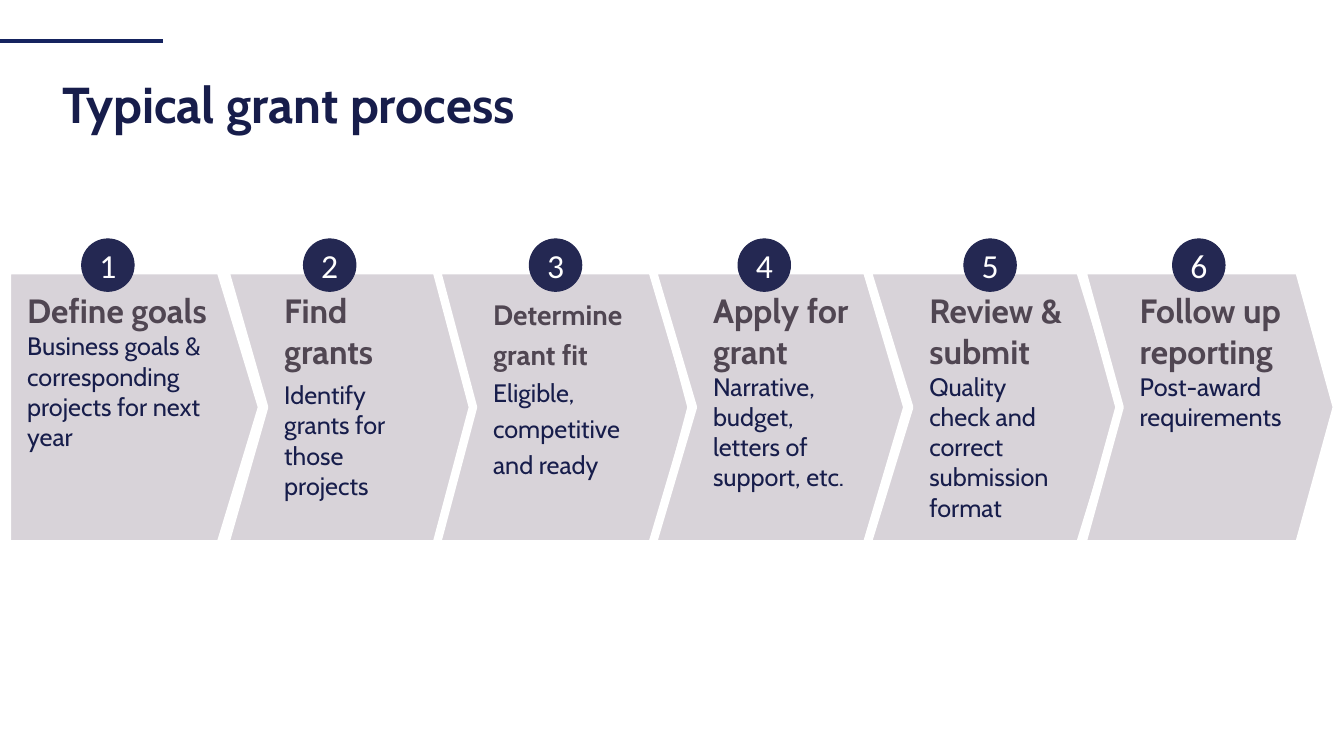
from dataclasses import dataclass

from lxml import etree
from pptx import Presentation
from pptx import util as u
from pptx.dml.color import RGBColor
from pptx.enum import shapes, text
from pptx.oxml.ns import qn

NAVY, RULE_BLUE, BADGE, PLUM, GREY, WHITE = (
    "171D4B", "15235F", "242852", "504652", "D8D3D9", "FFFFFF")
ARROW_TOP, ARROW_WIDTH, ARROW_HEIGHT = 2.68, 2.53, 2.72
BADGE_TOP, BADGE_SIZE = 2.37, 0.52


@dataclass(frozen=True)
class Step:
    left: float
    badge_left: float
    point: float
    heading: str
    detail: str
    heading_size: int = 24
    line_spacing: float = 1.0
    gap: int = 0


STEPS = [
    Step(0.07, 0.81, 0.163, "Define goals",
         "Business goals & corresponding projects for next year"),
    Step(2.23, 3.01, 0.154, "Find grants", "Identify grants for those projects", gap=6),
    Step(4.33, 5.25, 0.143, "Determine grant fit", "Eligible, competitive and ready",
         heading_size=20, line_spacing=1.2),
    Step(6.47, 7.32, 0.159, "Apply for grant", "Narrative, budget, letters of support, etc."),
    Step(8.6, 9.56, 0.165, "Review & submit", "Quality check and correct submission format"),
    Step(10.73, 11.63, 0.148, "Follow up reporting", "Post-award requirements"),
]


def color(value: str) -> RGBColor:
    return RGBColor.from_string(value)


def set_format(target, values: dict) -> None:
    for name, value in values.items():
        setattr(target, name, value)


def set_frame(frame, left: float, top: float, right: float, bottom: float, anchor) -> None:
    set_format(frame, {
        "word_wrap": True, "vertical_anchor": anchor,
        "margin_left": u.Inches(left), "margin_top": u.Inches(top),
        "margin_right": u.Inches(right), "margin_bottom": u.Inches(bottom)})


def write(paragraph, wording: str, size: int, hue: str, bold: bool = False,
          font: str = "Cabin", align=text.PP_ALIGN.LEFT,
          spacing: float = 1.0, before: int = 0) -> None:
    set_format(paragraph, {"alignment": align, "line_spacing": spacing,
                           "space_before": u.Pt(before), "space_after": u.Pt(0)})
    run = paragraph.add_run()
    run.text = wording
    set_format(run.font, {"name": font, "size": u.Pt(size), "bold": bold})
    run.font.color.rgb = color(hue)


def add_filled(slide, kind, left: float, top: float, width: float, height: float,
               fill: str, line: str, line_width: float):
    shape = slide.shapes.add_shape(
        kind, u.Inches(left), u.Inches(top), u.Inches(width), u.Inches(height))
    shape.shadow.inherit = False
    shape.fill.solid()
    shape.fill.fore_color.rgb = color(fill)
    shape.line.color.rgb = color(line)
    shape.line.width = u.Pt(line_width)
    return shape


def add_header(slide) -> None:
    rule = slide.shapes.add_connector(
        shapes.MSO_CONNECTOR.STRAIGHT, u.Inches(0), u.Inches(0.41),
        u.Inches(1.62), u.Inches(0.41))
    rule.line.color.rgb = color(RULE_BLUE)
    rule.line.width = u.Pt(3)
    etree.SubElement(rule._element.spPr, qn("a:effectLst"))
    title = slide.shapes.add_textbox(
        u.Inches(0.52), u.Inches(0.73), u.Inches(12.23), u.Inches(0.66))
    set_frame(title.text_frame, 0.1, 0.05, 0.1, 0.05, text.MSO_ANCHOR.MIDDLE)
    write(title.text_frame.paragraphs[0], "Typical grant process", 36, NAVY,
          bold=True, spacing=0.9)


def add_arrow(slide, step: Step, kind) -> None:
    arrow = add_filled(slide, kind, step.left, ARROW_TOP, ARROW_WIDTH, ARROW_HEIGHT,
                       GREY, WHITE, 6)
    arrow.adjustments[0] = step.point
    frame = arrow.text_frame
    set_frame(frame, 0.2, 0.2, 0.1, 0.1, text.MSO_ANCHOR.TOP)
    write(frame.paragraphs[0], step.heading, step.heading_size, PLUM, bold=True,
          spacing=step.line_spacing)
    write(frame.add_paragraph(), step.detail, 18, NAVY,
          spacing=step.line_spacing, before=step.gap)


def add_badge(slide, step: Step, number: int) -> None:
    badge = add_filled(slide, shapes.MSO_SHAPE.OVAL, step.badge_left, BADGE_TOP,
                       BADGE_SIZE, BADGE_SIZE, BADGE, BADGE, 0.75)
    set_frame(badge.text_frame, 0, 0, 0, 0, text.MSO_ANCHOR.MIDDLE)
    write(badge.text_frame.paragraphs[0], str(number), 24, WHITE,
          font="Calibri", align=text.PP_ALIGN.CENTER)


def main() -> None:
    presentation = Presentation()
    set_format(presentation, {"slide_width": u.Inches(13.33), "slide_height": u.Inches(7.5)})
    slide = presentation.slides.add_slide(presentation.slide_layouts[6])

    # Rule and title
    add_header(slide)

    # Process arrows: a flat start, then chevrons
    for index, step in enumerate(STEPS):
        kind = shapes.MSO_SHAPE.CHEVRON if index else shapes.MSO_SHAPE.PENTAGON
        add_arrow(slide, step, kind)

    # Numbered badges on top of the arrows
    for number, step in enumerate(STEPS, start=1):
        add_badge(slide, step, number)

    presentation.save("out.pptx")


if __name__ == "__main__":
    main()
